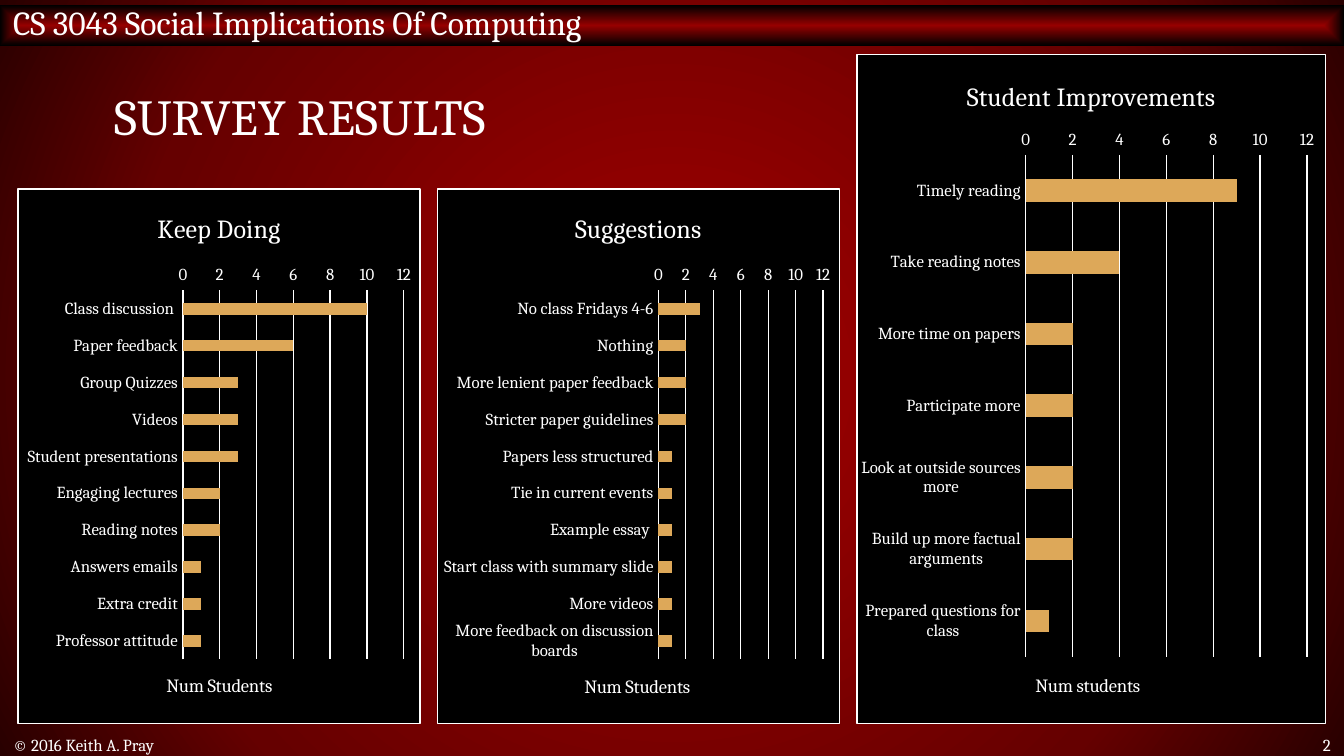
from dataclasses import dataclass

from lxml.etree import SubElement
from pptx import Presentation
from pptx.chart.data import CategoryChartData
from pptx.dml.color import RGBColor
from pptx.enum.chart import XL_CHART_TYPE as ChartType, XL_TICK_MARK as TickMark
from pptx.enum.shapes import MSO_SHAPE as Preset
from pptx.enum.text import MSO_ANCHOR as Anchor, MSO_AUTO_SIZE as AutoSize, PP_ALIGN as Align
from pptx.oxml import parse_xml
from pptx.oxml.ns import nsdecls, qn
from pptx.util import Inches, Pt

FONT = "Cambria"
WHITE, BLACK, GOLD, RED = "FFFFFF", "000000", "DDA859", "960000"


@dataclass
class Survey:
    title: str
    axis_title: str
    box: tuple[float, float, float, float]
    plot: tuple[float, float, float, float]  # fractions of the chart box
    answers: dict[str, int]


SURVEYS = [
    Survey("Keep Doing", "Num Students", (0.13, 1.4, 3, 3.99), (0.41, 0.19, 0.55, 0.69), {
        "Class discussion ": 10, "Paper feedback": 6, "Group Quizzes": 3, "Videos": 3,
        "Student presentations": 3, "Engaging lectures": 2, "Reading notes": 2,
        "Answers emails": 1, "Extra credit": 1, "Professor attitude": 1}),
    Survey("Suggestions", "Num Students", (3.25, 1.4, 3, 3.99), (0.55, 0.19, 0.41, 0.69), {
        "No class Fridays 4-6": 3, "Nothing": 2, "More lenient paper feedback": 2,
        "Stricter paper guidelines": 2, "Papers less structured": 1,
        "Tie in current events": 1, "Example essay ": 1, "Start class with summary slide": 1,
        "More videos": 1, "More feedback on discussion boards": 1}),
    Survey("Student Improvements", "Num students", (6.37, 0.4, 3.5, 4.99),
           (0.36, 0.15, 0.6, 0.75), {
        "Timely reading": 9, "Take reading notes": 4, "More time on papers": 2,
        "Participate more": 2, "Look at outside sources more": 2,
        "Build up more factual arguments": 2, "Prepared questions for class": 1}),
]


def rgb(color: str) -> RGBColor:
    return RGBColor.from_string(color)


def style_font(font, size: float) -> None:
    font.name, font.size, font.bold = FONT, Pt(size), False
    font.color.rgb = rgb(WHITE)


def write(shape, text: str, size: float, align=Align.LEFT) -> None:
    frame = shape.text_frame
    frame.text = text
    frame.word_wrap = True
    frame.auto_size = AutoSize.NONE
    frame.vertical_anchor = Anchor.MIDDLE
    paragraph = frame.paragraphs[0]
    paragraph.alignment = align
    style_font(paragraph.runs[0].font, size)


def path_gradient(owner, fill, path_kind: str, stops: dict[int, str]) -> None:
    """Fill from the centre outwards."""
    fill.solid()
    fill.fore_color.rgb = rgb(BLACK)
    solid = owner.element.find(".//" + qn("a:solidFill"))
    marks = "".join(f'<a:gs pos="{at * 1000}"><a:srgbClr val="{color}"/></a:gs>'
                    for at, color in stops.items())
    solid.getparent().replace(solid, parse_xml(
        f'<a:gradFill {nsdecls("a")} rotWithShape="1"><a:gsLst>{marks}</a:gsLst>'
        f'<a:path path="{path_kind}"><a:fillToRect l="50000" t="50000" r="50000" b="50000"/>'
        '</a:path></a:gradFill>'))


def place_plot(chart, plot: tuple[float, float, float, float]) -> None:
    area = chart.element.find(".//" + qn("c:plotArea"))
    old = area.find(qn("c:layout"))
    if old is not None:
        area.remove(old)
    layout = parse_xml(f'<c:layout {nsdecls("c")}><c:manualLayout/></c:layout>')
    settings = [("layoutTarget", "inner"), ("xMode", "edge"), ("yMode", "edge"),
                *zip("xywh", plot)]
    for tag, value in settings:
        SubElement(layout[0], qn(f"c:{tag}")).set("val", str(value))
    area.insert(0, layout)


def draw_survey(slide, survey: Survey) -> None:
    data = CategoryChartData()
    data.categories = list(survey.answers)
    data.add_series("Series 1", list(survey.answers.values()))
    chart = slide.shapes.add_chart(
        ChartType.BAR_CLUSTERED, *map(Inches, survey.box), data).chart
    style_font(chart.font, 10)
    chart.has_legend = False
    chart.element.find(qn("c:chart")).addnext(parse_xml(
        f'<c:spPr {nsdecls("c", "a")}><a:solidFill><a:srgbClr val="{BLACK}"/></a:solidFill>'
        f'<a:ln w="{Pt(0.75)}"><a:solidFill><a:srgbClr val="{WHITE}"/></a:solidFill></a:ln>'
        '</c:spPr>'))

    # Bars
    bars = chart.plots[0]
    bars.gap_width = 219
    bars.vary_by_categories = False
    bars.series[0].format.fill.solid()
    bars.series[0].format.fill.fore_color.rgb = rgb(GOLD)

    # Axes: first answer on top
    answers, students = chart.category_axis, chart.value_axis
    answers.reverse_order = True
    students.minimum_scale, students.maximum_scale, students.major_unit = 0, 12, 2
    for axis in (answers, students):
        axis.major_tick_mark = axis.minor_tick_mark = TickMark.NONE
        style_font(axis.tick_labels.font, 9)
    students.format.line.fill.background()
    for line in (answers.format.line, students.major_gridlines.format.line):
        line.color.rgb = rgb(WHITE)
        line.width = Pt(0.75)

    # Titles
    for title, text, size in ((chart.chart_title, survey.title, 14),
                              (students.axis_title, survey.axis_title, 10)):
        title.text_frame.text = text
        style_font(title.text_frame.paragraphs[0].runs[0].font, size)
    chart.chart_title.include_in_layout = False
    place_plot(chart, survey.plot)


def main() -> None:
    deck = Presentation()
    deck.slide_width = Inches(10)
    deck.slide_height = deck.slide_width * 9 // 16
    slide = deck.slides.add_slide(deck.slide_layouts[5])
    path_gradient(slide, slide.background.fill, "circle",
                  {17: RED, 71: "650000", 100: "290000"})

    # Course band
    band = slide.shapes.add_shape(
        Preset.RECTANGLE, Inches(0), Inches(0.04), Inches(10), Inches(0.3))
    band.shadow.inherit = False
    band.line.fill.background()
    path_gradient(band, band.fill, "shape", {0: RED, 100: BLACK})
    write(band, "CS 3043 Social Implications Of Computing", 18)
    band.text_frame.margin_top = 0

    # Title
    title = slide.shapes.title
    title.left, title.top, title.width, title.height = map(Inches, (0.75, 0.4, 8.5, 1))
    write(title, "SURVEY RESULTS", 27)
    title.text_frame.paragraphs[0].line_spacing = 0.8

    # Footer
    for left, width, text, align in ((0, 6.08, "© 2016 Keith A. Pray", Align.LEFT),
                                     (9.32, 0.68, "2", Align.RIGHT)):
        footer = slide.shapes.add_textbox(
            Inches(left), Inches(5.46), Inches(width), Inches(0.16))
        write(footer, text, 9, align)

    # Charts
    for survey in SURVEYS:
        draw_survey(slide, survey)
    deck.save("out.pptx")


if __name__ == "__main__":
    main()
